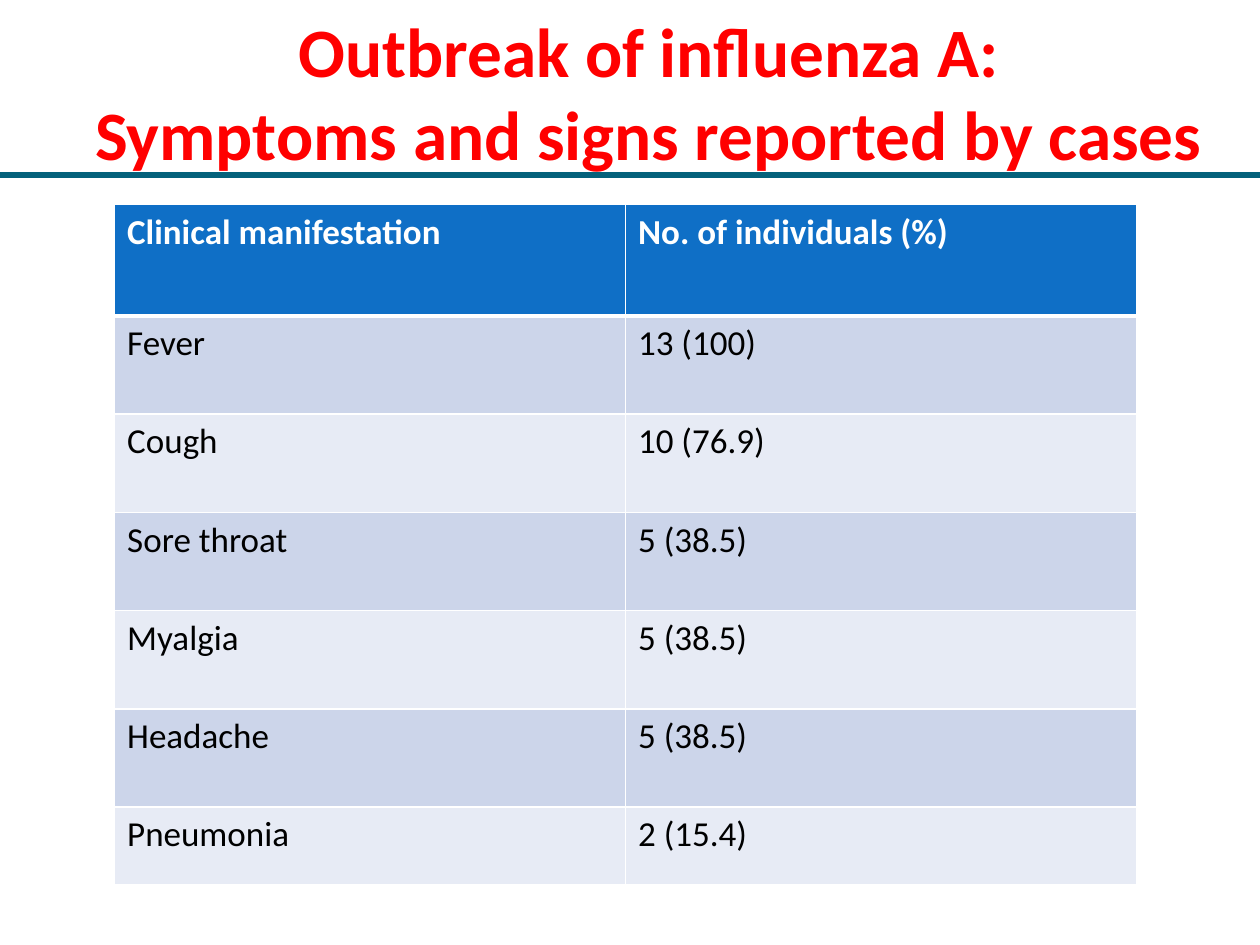
import pptx
import pptx.dml.color
import pptx.enum.shapes
import pptx.enum.text
import pptx.oxml
import pptx.oxml.ns
import pptx.util
from pptx.util import Cm


def rgb(hex_string):
    return pptx.dml.color.RGBColor.from_string(hex_string)


def add_border(cell, side, points):
    """Draw a white border on one side (L, R, T or B); call before the cell is filled."""
    namespace = pptx.oxml.ns.nsdecls("a")
    cell._tc.get_or_add_tcPr().append(pptx.oxml.parse_xml(
        f'<a:ln{side} {namespace} w="{pptx.util.Pt(points)}"><a:solidFill>'
        f'<a:srgbClr val="FFFFFF"/></a:solidFill></a:ln{side}>'))


presentation = pptx.Presentation()
presentation.slide_width = Cm(25.4)
presentation.slide_height = Cm(19.05)
slide = presentation.slides.add_slide(presentation.slide_layouts[5])

# Title, raised by its bottom margin to sit above the rule
title = slide.shapes.title
title.left, title.top, title.width, title.height = Cm(1.27), Cm(0.76), Cm(23.62), Cm(3.56)
heading = title.text_frame
heading.text = "Outbreak of influenza A:\vSymptoms and signs reported by cases"
heading.auto_size = pptx.enum.text.MSO_AUTO_SIZE.NONE
heading.vertical_anchor = pptx.enum.text.MSO_ANCHOR.BOTTOM
heading.margin_top = 0
heading.margin_bottom = Cm(0.8)
heading.paragraphs[0].alignment = pptx.enum.text.PP_ALIGN.CENTER
for run in heading.paragraphs[0].runs:
    run.font.name = "Calibri"
    run.font.size = pptx.util.Pt(39.6)
    run.font.bold = True
    run.font.color.rgb = rgb("FF0000")

# Rule under the title
rule = slide.shapes.add_connector(
    pptx.enum.shapes.MSO_CONNECTOR.STRAIGHT, 0, Cm(3.53), Cm(25.4), Cm(3.53))
rule.line.color.rgb = rgb("04617B")
rule.line.width = pptx.util.Pt(3)
rule._element.spPr.append(
    pptx.oxml.parse_xml(f'<a:effectLst {pptx.oxml.ns.nsdecls("a")}/>'))

# Symptom table
symptoms = [
    ("Clinical manifestation", "No. of individuals (%)"),
    ("Fever", "13 (100)"),
    ("Cough", "10 (76.9)"),
    ("Sore throat", "5 (38.5)"),
    ("Myalgia", "5 (38.5)"),
    ("Headache", "5 (38.5)"),
    ("Pneumonia", "2 (15.4)"),
]
row_heights = [2.25] + [1.98] * 5 + [1.57]
table = slide.shapes.add_table(
    len(symptoms), 2, Cm(2.31), Cm(4.12), Cm(20.6), Cm(sum(row_heights))).table

for row_index, (entries, height) in enumerate(zip(symptoms, row_heights)):
    is_header = row_index == 0
    band = "0F6FC6" if is_header else ("E7EBF5", "CCD5EA")[row_index % 2]
    table.rows[row_index].height = Cm(height)
    for column_index, entry in enumerate(entries):
        cell = table.cell(row_index, column_index)
        for side in "LRTB":
            beside_header = (row_index, side) in [(0, "B"), (1, "T")]
            add_border(cell, side, 3 if beside_header else 1)
        cell.fill.solid()
        cell.fill.fore_color.rgb = rgb(band)
        cell.text_frame.text = entry
        font = cell.text_frame.paragraphs[0].runs[0].font
        font.name = "Calibri"
        font.size = pptx.util.Pt(20)
        font.bold = is_header
        font.color.rgb = rgb("FFFFFF" if is_header else "000000")

presentation.save("out.pptx")
